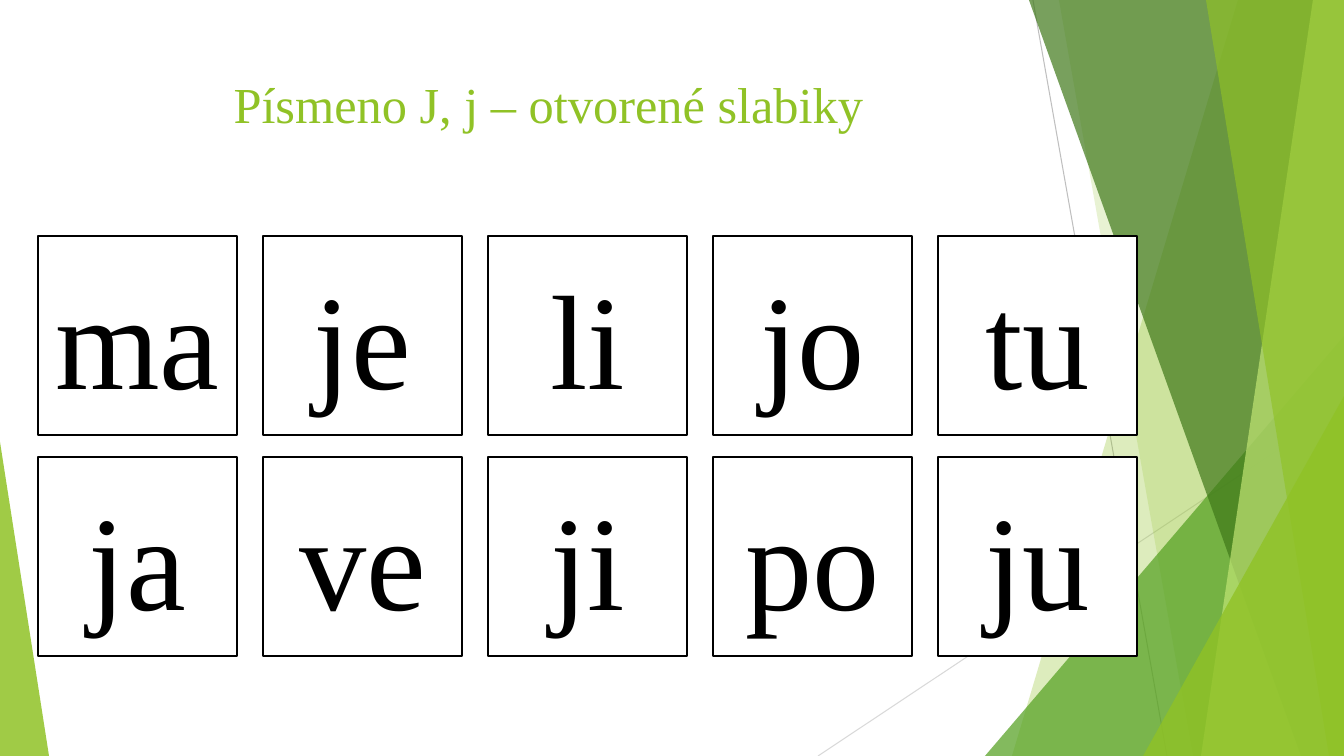
from lxml import etree
from pptx import Presentation
from pptx.dml.color import RGBColor
from pptx.enum.shapes import MSO_CONNECTOR as Connector, MSO_SHAPE as Shape
from pptx.enum.text import MSO_ANCHOR as Anchor, PP_ALIGN as Align
from pptx.oxml.ns import qn
from pptx.util import Pt

WIDTH, HEIGHT = 1344, 756
SCALE = 12192000 / WIDTH  # EMU per px

WHITE = RGBColor(0xFF, 0xFF, 0xFF)
BLACK = RGBColor(0x00, 0x00, 0x00)
LIME = RGBColor(0x90, 0xC2, 0x26)
GREEN = RGBColor(0x54, 0xA0, 0x21)
DARK_GREEN = RGBColor(0x3F, 0x78, 0x19)
PALE_GREEN = RGBColor(0xC0, 0xE4, 0x74)
GREY = RGBColor(0xBF, 0xBF, 0xBF)
LIGHT_GREY = RGBColor(0xD9, 0xD9, 0xD9)

FONT = "Times New Roman"
SYLLABLES = [
    ["ma", "je", "li", "jo", "tu"],
    ["ja", "ve", "ji", "po", "ju"],
]
CARD_LEFT, CARD_TOP, CARD_SIZE = 38, 236, 199
COLUMN_STEP, ROW_STEP = 225, 221


def px(*lengths):
    return [round(length * SCALE) for length in lengths]


def fill_translucent(shape, color, opacity):
    shape.shadow.inherit = False
    shape.line.fill.background()
    shape.fill.solid()
    shape.fill.fore_color.rgb = color
    color_element = shape._element.spPr.find(qn("a:solidFill"))[0]
    etree.SubElement(color_element, qn("a:alpha"), val=str(opacity * 1000))


def add_thin_line(slide, start, end, color):
    line = slide.shapes.add_connector(Connector.STRAIGHT, *px(*start, *end))
    line.line.color.rgb = color
    line.line.width = Pt(0.75)
    etree.SubElement(line._element.spPr, qn("a:effectLst"))


def add_band(slide, top_x, bottom_x, color, opacity):
    """Fill the slide from a slanted left edge to the right border."""
    builder = slide.shapes.build_freeform(top_x, 0, scale=SCALE)
    builder.add_line_segments([(WIDTH, 0), (WIDTH, HEIGHT), (bottom_x, HEIGHT)])
    fill_translucent(builder.convert_to_shape(), color, opacity)


def add_corner(slide, left, top, width, apex, color, opacity):
    """Add a triangle that stands on the bottom border."""
    triangle = slide.shapes.add_shape(
        Shape.ISOSCELES_TRIANGLE, *px(left, top, width, HEIGHT - top))
    triangle.adjustments[0] = apex
    fill_translucent(triangle, color, opacity)


def add_decoration(slide):
    add_thin_line(slide, (1033, 0), (1167, HEIGHT), GREY)
    add_thin_line(slide, (WIDTH, 406), (818, HEIGHT), LIGHT_GREY)
    add_band(slide, 1238, 1012, LIME, 30)
    add_band(slide, 1059, 1193, LIME, 20)
    add_corner(slide, 985, 336, 359, 1, GREEN, 72)
    add_band(slide, 1029, 1301, DARK_GREEN, 70)
    add_band(slide, 1313, 1201, PALE_GREEN, 70)
    add_band(slide, 1206, 1329, LIME, 65)
    add_corner(slide, 1143, 396, 201, 1, LIME, 80)
    add_corner(slide, 0, 442, 49, 0, LIME, 85)


def format_text(paragraph, size, color):
    paragraph.alignment = Align.CENTER
    paragraph.font.name = FONT
    paragraph.font.size = Pt(size)
    paragraph.font.color.rgb = color


def set_title(slide, text):
    title = slide.shapes.title
    title.left, title.top, title.width, title.height = px(75, 68, 947, 145)
    title.text_frame.text = text
    title.text_frame.vertical_anchor = Anchor.TOP
    format_text(title.text_frame.paragraphs[0], 36, LIME)


def add_card(slide, left, top, syllable):
    card = slide.shapes.add_shape(
        Shape.RECTANGLE, *px(left, top, CARD_SIZE, CARD_SIZE))
    card.shadow.inherit = False
    card.fill.solid()
    card.fill.fore_color.rgb = WHITE
    card.line.color.rgb = BLACK
    card.line.width = Pt(1.5)
    card.text_frame.text = syllable
    card.text_frame.vertical_anchor = Anchor.MIDDLE
    paragraph = card.text_frame.paragraphs[0]
    paragraph.space_before = Pt(10)
    format_text(paragraph, 96, BLACK)


def main():
    presentation = Presentation()
    presentation.slide_width, presentation.slide_height = px(WIDTH, HEIGHT)
    slide = presentation.slides.add_slide(presentation.slide_layouts[5])

    # Green bands behind the content
    add_decoration(slide)

    set_title(slide, "Písmeno J, j – otvorené slabiky")

    # Grid of syllable cards
    for row, syllables in enumerate(SYLLABLES):
        for column, syllable in enumerate(syllables):
            add_card(slide, CARD_LEFT + column * COLUMN_STEP,
                     CARD_TOP + row * ROW_STEP, syllable)

    presentation.save("out.pptx")


if __name__ == "__main__":
    main()
